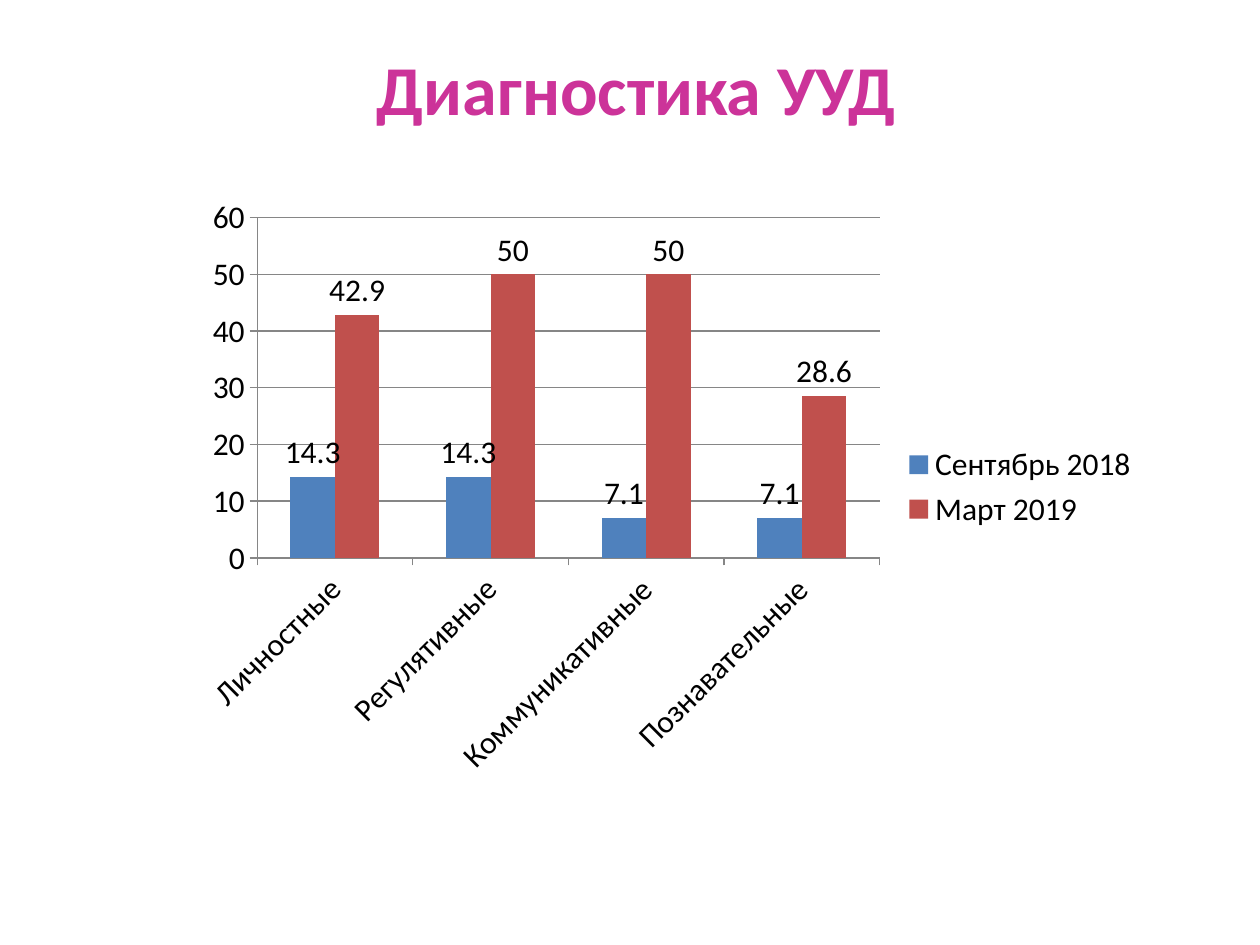
from dataclasses import dataclass

from pptx import Presentation
from pptx.chart.data import CategoryChartData
from pptx.dml.color import RGBColor
from pptx.enum.chart import XL_CHART_TYPE, XL_LABEL_POSITION, XL_LEGEND_POSITION, XL_TICK_MARK
from pptx.enum.text import MSO_ANCHOR, PP_ALIGN
from pptx.util import Inches, Pt

TITLE = "Диагностика УУД"
CATEGORIES = ["Личностные", "Регулятивные", "Коммуникативные", "Познавательные"]
SERIES = {
    "Сентябрь 2018": (14.3, 14.3, 7.1, 7.1),
    "Март 2019": (42.9, 50, 50, 28.6),
}

WIDTH, HEIGHT = 10, 7.5
TITLE_BOX = (0.55, 0.23, 9, 0.93)
CHART_BOX = (1.48, 1.48, 7.66, 4.77)


@dataclass(frozen=True)
class Theme:
    font: str = "Calibri"
    title_size: int = 40
    chart_size: int = 18
    title: str = "CC3399"
    text: str = "000000"
    line: str = "868686"
    series: tuple = ("4F81BD", "C0504D")


THEME = Theme()


def set_font(font, size, color, bold=False):
    font.name = THEME.font
    font.size = Pt(size)
    font.bold = bold
    font.color.rgb = RGBColor.from_string(color)


def set_line(line_format):
    line_format.line.width = Pt(0.75)
    line_format.line.color.rgb = RGBColor.from_string(THEME.line)


def add_text(slide, text, box, *, size, color, bold=False, align=PP_ALIGN.CENTER):
    frame = slide.shapes.add_textbox(*map(Inches, box)).text_frame
    frame.word_wrap = True
    frame.vertical_anchor = MSO_ANCHOR.MIDDLE
    paragraph = frame.paragraphs[0]
    paragraph.alignment = align
    run = paragraph.add_run()
    run.text = text
    set_font(run.font, size, color, bold)


def add_column_chart(slide, box):
    data = CategoryChartData()
    data.categories = CATEGORIES
    for name, values in SERIES.items():
        data.add_series(name, values)
    chart = slide.shapes.add_chart(
        XL_CHART_TYPE.COLUMN_CLUSTERED, *map(Inches, box), data
    ).chart
    set_font(chart.font, THEME.chart_size, THEME.text)
    chart.has_title = False
    chart.has_legend = True
    chart.legend.position = XL_LEGEND_POSITION.RIGHT
    chart.legend.include_in_layout = False

    for axis in (chart.category_axis, chart.value_axis):
        axis.major_tick_mark = XL_TICK_MARK.OUTSIDE
        axis.minor_tick_mark = XL_TICK_MARK.NONE
        set_line(axis.format)
    chart.value_axis.has_major_gridlines = True
    set_line(chart.value_axis.major_gridlines.format)

    plot = chart.plots[0]
    plot.gap_width = 150
    plot.overlap = 0
    plot.vary_by_categories = False
    for series, color in zip(plot.series, THEME.series):
        series.format.fill.solid()
        series.format.fill.fore_color.rgb = RGBColor.from_string(color)
        labels = series.data_labels
        labels.show_value = True
        labels.position = XL_LABEL_POSITION.OUTSIDE_END
        set_font(labels.font, THEME.chart_size, THEME.text)


def main():
    presentation = Presentation()
    presentation.slide_width = Inches(WIDTH)
    presentation.slide_height = Inches(HEIGHT)
    slide = presentation.slides.add_slide(presentation.slide_layouts[6])
    add_text(slide, TITLE, TITLE_BOX, size=THEME.title_size, color=THEME.title, bold=True)
    add_column_chart(slide, CHART_BOX)
    presentation.save("out.pptx")


if __name__ == "__main__":
    main()
